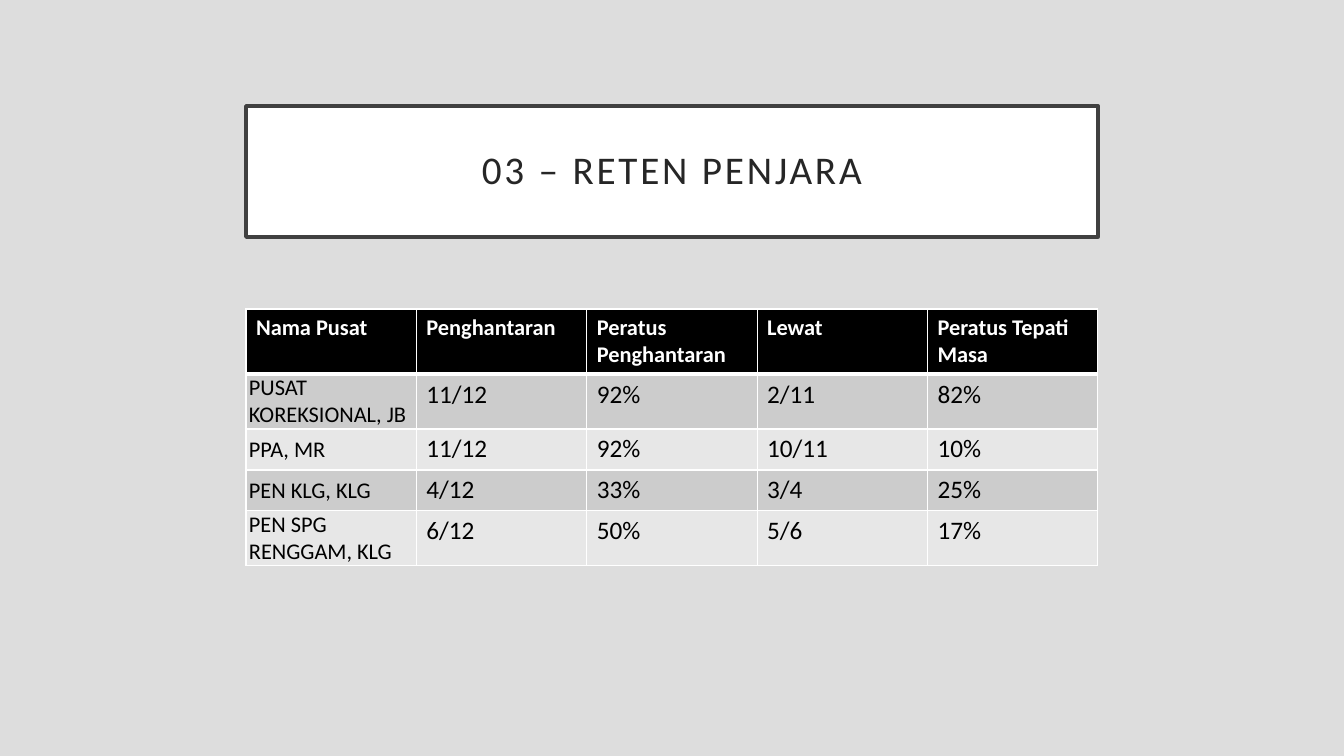
from lxml import etree
from pptx import Presentation
from pptx.dml.color import RGBColor
from pptx.enum.text import MSO_ANCHOR as ANCHOR, MSO_AUTO_SIZE as AUTO_SIZE, PP_ALIGN as ALIGN
from pptx.oxml.ns import qn
from pptx.util import Emu, Pt

WHITE = RGBColor(0xFF, 0xFF, 0xFF)
BLACK = RGBColor(0x00, 0x00, 0x00)
BACKGROUND = RGBColor(0xDD, 0xDD, 0xDD)
FRAME = RGBColor(0x40, 0x40, 0x40)
TITLE = RGBColor(0x26, 0x26, 0x26)
BANDS = [RGBColor(0xE7, 0xE7, 0xE7), RGBColor(0xCC, 0xCC, 0xCC)]

ROWS = [
    ["Nama Pusat", "Penghantaran", "Peratus Penghantaran", "Lewat", "Peratus Tepati Masa"],
    ["PUSAT KOREKSIONAL, JB", "11/12", "92%", "2/11", "82%"],
    ["PPA, MR", "11/12", "92%", "10/11", "10%"],
    ["PEN KLG, KLG", "4/12", "33%", "3/4", "25%"],
    ["PEN SPG RENGGAM, KLG", "6/12", "50%", "5/6", "17%"],
]
ROW_HEIGHTS = [65, 55, 41, 40, 55]


def px(n):
    return Emu(round(n * 12192000 / 1344))


def write(tf, text, size=18, color=BLACK, bold=False, align=ALIGN.LEFT, line=1.0, spacing=0):
    p = tf.paragraphs[0]
    p.alignment = align
    p.line_spacing = line
    r = p.add_run()
    r.text = text
    r.font.name = "Calibri"
    r.font.size = Pt(size)
    r.font.bold = bold
    r.font.color.rgb = color
    r.font._element.set("spc", str(spacing * 100))


prs = Presentation()
prs.slide_width, prs.slide_height = px(1344), px(756)
s = prs.slides.add_slide(prs.slide_layouts[5])
s.background.fill.solid()
s.background.fill.fore_color.rgb = BACKGROUND

sp = s.shapes.title
sp.left, sp.top, sp.width, sp.height = px(246), px(106), px(852), px(131)
sp.fill.solid()
sp.fill.fore_color.rgb = WHITE
sp.line.color.rgb = FRAME
sp.line.width = Pt(2.5)
tf = sp.text_frame
tf.word_wrap = True
tf.auto_size = AUTO_SIZE.NONE
tf.vertical_anchor = ANCHOR.MIDDLE
tf.margin_left = tf.margin_right = tf.margin_top = tf.margin_bottom = px(20)
write(tf, "03 – RETEN PENJARA", size=28, color=TITLE, align=ALIGN.CENTER, line=0.9, spacing=2)

table = s.shapes.add_table(5, 5, px(246), px(309), px(852), px(sum(ROW_HEIGHTS))).table
for row, height in zip(table.rows, ROW_HEIGHTS):
    row.height = px(height)

for i, texts in enumerate(ROWS):
    for j, text in enumerate(texts):
        cell = table.cell(i, j)
        header, name = i == 0, i > 0 and j == 0
        if name:
            cell.vertical_anchor = ANCHOR.MIDDLE
            cell.margin_left = cell.margin_right = px(3)
            cell.margin_top = cell.margin_bottom = 0
        write(cell.text_frame, text, size=16 if header or name else 18,
              color=WHITE if header else BLACK, bold=header)
        tcPr = cell._tc.get_or_add_tcPr()
        for side in "LRTB":
            thick = (i, side) in [(0, "B"), (1, "T")]
            ln = etree.SubElement(tcPr, qn(f"a:ln{side}"), w=str(Pt(3 if thick else 1)))
            fill = etree.SubElement(ln, qn("a:solidFill"))
            etree.SubElement(fill, qn("a:srgbClr"), val=str(WHITE))
        cell.fill.solid()
        cell.fill.fore_color.rgb = BLACK if header else BANDS[i % 2]

prs.save("out.pptx")
